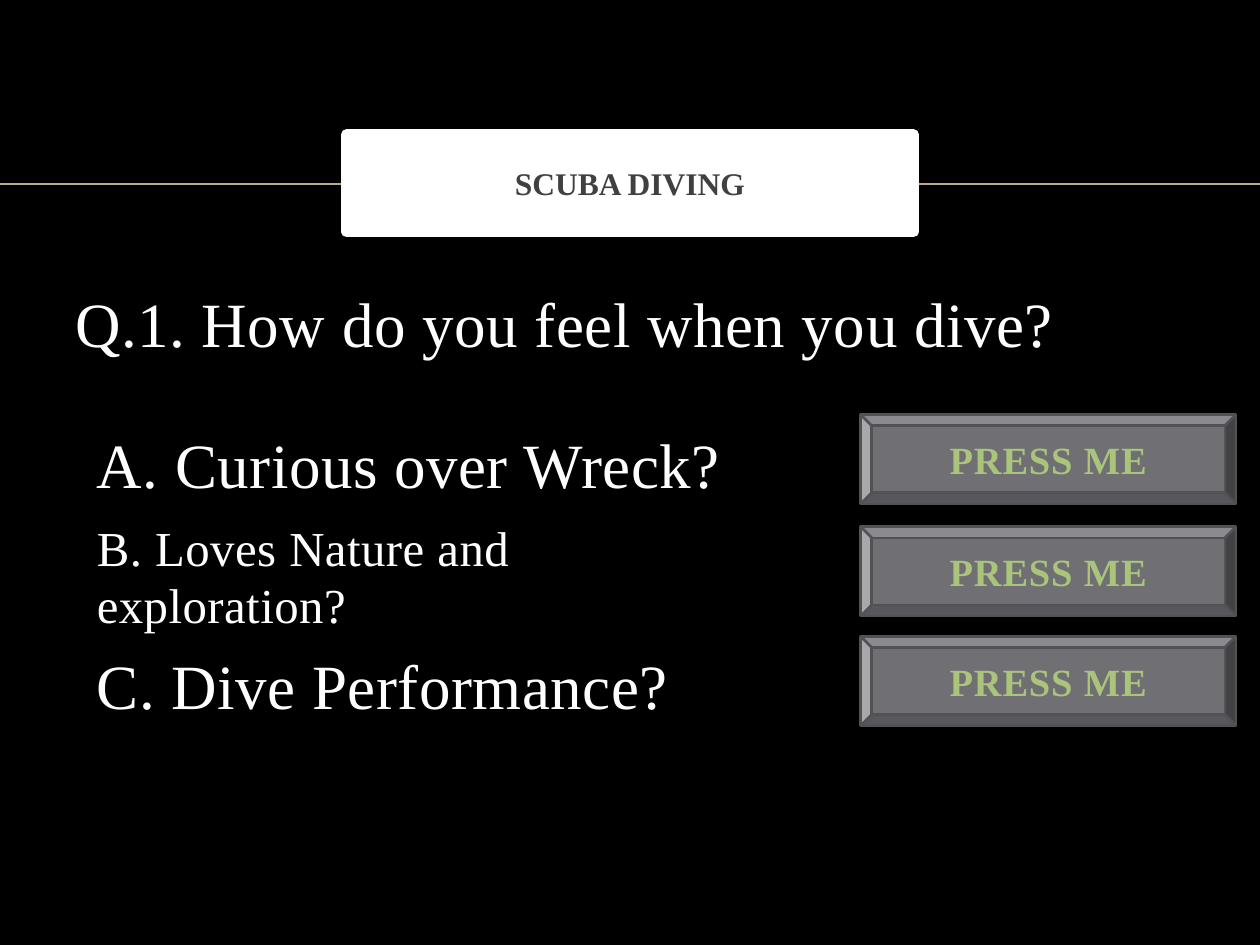
import pptx
import pptx.dml.color
import pptx.enum.shapes
import pptx.enum.text
import pptx.oxml
import pptx.oxml.ns
import pptx.util
from pptx.util import Pt

COLORS = {
    "background": "000000",
    "text": "FFFFFF",
    "rule": "BBAA8A",
    "banner": "FFFFFF",
    "title": "404040",
    "button": "6F6F74",
    "button_edge": "525256",
    "label_light": "ABC47C",
    "label_dark": "798C56",
}
FONT = "Times New Roman"
SHAPES = pptx.enum.shapes.MSO_SHAPE
ANSWERS = [
    (239.76, 236.88, ["A. Curious over Wreck?"], 36, 1.0),
    (298.8, 300.96, ["B. Loves Nature and", "exploration?"], 27.9, 0.8),
    (365.76, 363.6, ["C. Dive Performance?"], 36, 1.0),
]


def rgb(name):
    """Return the named palette colour."""
    return pptx.dml.color.RGBColor.from_string(COLORS[name])


def set_font(paragraph, size, color, bold=False, spacing=0):
    """Style a paragraph and the letter spacing of its runs."""
    font = paragraph.font
    font.name, font.size, font.bold = FONT, Pt(size), bold
    font.color.rgb = rgb(color)
    if spacing:
        for run in paragraph.runs:
            run.font._element.set("spc", str(round(spacing * 100)))


def add_rule(slide, left, top, width):
    """Draw the thin horizontal line behind the title."""
    line = slide.shapes.add_connector(
        pptx.enum.shapes.MSO_CONNECTOR.STRAIGHT,
        Pt(left), Pt(top), Pt(left + width), Pt(top))
    line.line.color.rgb = rgb("rule")
    line.line.width = Pt(1)
    line._element.spPr.append(pptx.oxml.parse_xml(
        f"<a:effectLst {pptx.oxml.ns.nsdecls('a')}/>"))


def add_panel(slide, kind, box, fill, edge, edge_width, label):
    """Add a filled shape with one centred label and return its paragraph."""
    shape = slide.shapes.add_shape(kind, *map(Pt, box))
    shape.shadow.inherit = False
    shape.fill.solid()
    shape.fill.fore_color.rgb = rgb(fill)
    shape.line.color.rgb = rgb(edge)
    shape.line.width = Pt(edge_width)
    shape.text_frame.vertical_anchor = pptx.enum.text.MSO_ANCHOR.MIDDLE
    paragraph = shape.text_frame.paragraphs[0]
    paragraph.text = label
    paragraph.alignment = pptx.enum.text.PP_ALIGN.CENTER
    return paragraph


def add_title(slide, left, top, width, height):
    """Add the title banner."""
    paragraph = add_panel(slide, SHAPES.RECTANGLE, (left, top, width, height),
                          "banner", "banner", 6, "SCUBA DIVING")
    paragraph.space_before = Pt(4)
    set_font(paragraph, 18, "title", bold=True)


def add_text(slide, left, top, width, height, lines, size=36, line_spacing=1.0):
    """Add a question or answer, one paragraph to a line."""
    frame = slide.shapes.add_textbox(*map(Pt, (left, top, width, height))).text_frame
    frame.word_wrap = True
    frame.text = "\n".join(lines)
    for paragraph in frame.paragraphs:
        paragraph.space_before = Pt(6)
        paragraph.line_spacing = line_spacing
        set_font(paragraph, size, "text", spacing=0.3)


def add_button(slide, left, top, width, height):
    """Add a bevelled button with a gradient label."""
    paragraph = add_panel(slide, SHAPES.BEVEL, (left, top, width, height),
                          "button", "button_edge", 1.5, "PRESS ME")
    set_font(paragraph, 22, "label_light", bold=True, spacing=0.5)
    fill = paragraph.runs[0].font.fill
    fill.gradient()
    fill.gradient_angle = 270
    stops = zip(fill.gradient_stops, (0.25, 1), ("label_light", "label_dark"))
    for stop, position, color in stops:
        stop.position = position
        stop.color.rgb = rgb(color)


def main():
    """Build and save the quiz slide."""
    presentation = pptx.Presentation()
    presentation.slide_width, presentation.slide_height = Pt(720), Pt(540)
    slide = presentation.slides.add_slide(presentation.slide_layouts[6])
    slide.background.fill.solid()
    slide.background.fill.fore_color.rgb = rgb("background")
    add_rule(slide, 0, 105, 720)
    add_text(slide, 36, 159.12, 648, 69.12, ["Q.1. How do you feel when you dive?"])
    add_title(slide, 198, 77, 324, 55.5)
    for text_top, button_top, lines, size, line_spacing in ANSWERS:
        add_text(slide, 48.24, text_top, 648, 69.12, lines, size, line_spacing)
        add_button(slide, 491.76, button_top, 214.56, 51.12)
    presentation.save("out.pptx")


if __name__ == "__main__":
    main()
